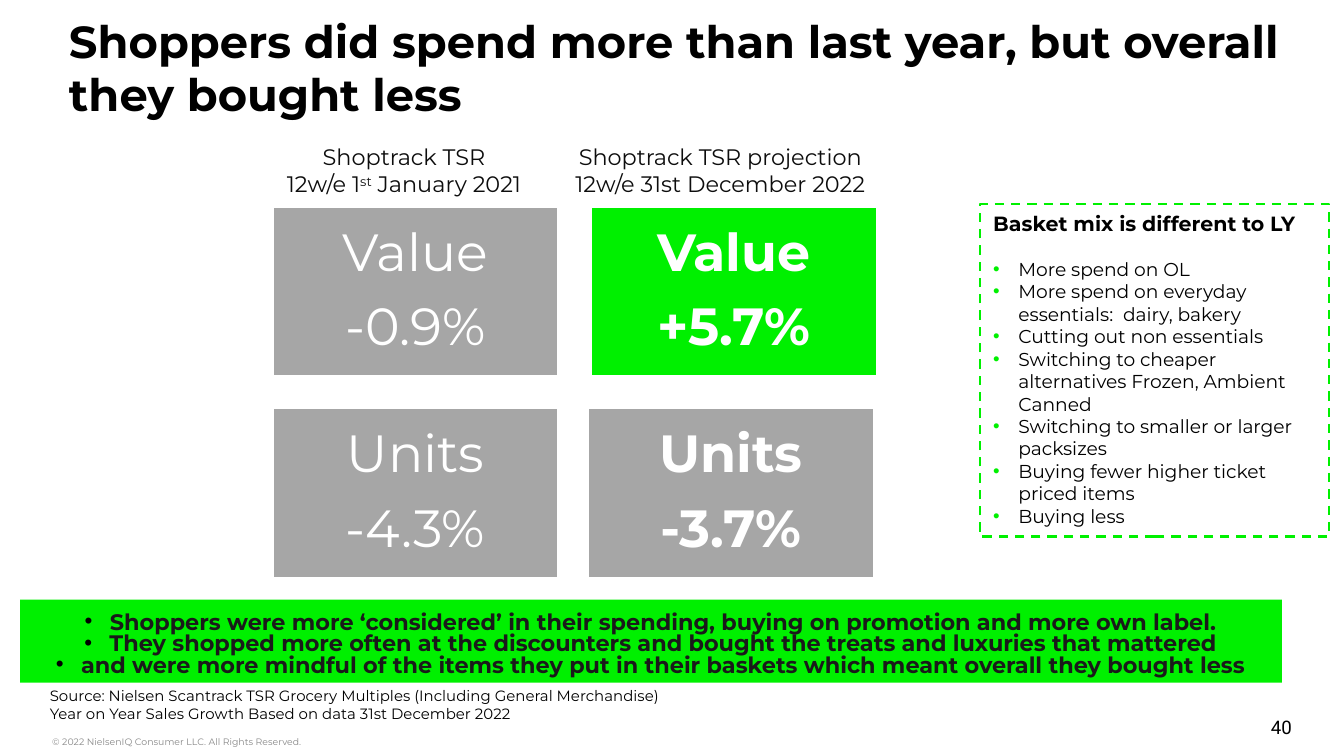
import dataclasses

import lxml.etree
import pptx
import pptx.dml.color
import pptx.enum.dml
import pptx.enum.shapes
import pptx.enum.text
import pptx.oxml.ns
import pptx.util

Pt = pptx.util.Pt
Align = pptx.enum.text.PP_ALIGN
Anchor = pptx.enum.text.MSO_ANCHOR


@dataclasses.dataclass(frozen=True)
class Theme:
    font: str = "Montserrat"
    digit: str = "Roboto"
    black: str = "000000"
    ink: str = "1A1A1A"
    label: str = "0D0D0D"
    white: str = "FFFFFF"
    gray: str = "A6A6A6"
    dim: str = "888888"
    green: str = "00F000"
    title: float = 24
    big: float = 28
    body: float = 12
    head: float = 11
    list: float = 10
    note: float = 8
    tiny: float = 5


T = Theme()


def color(code):
    return pptx.dml.color.RGBColor.from_string(code)


def style(para, size, code, bold=False, align=Align.LEFT, face=T.font):
    para.alignment = align
    font = para.font
    font.name, font.size, font.bold = face, Pt(size), bold
    font.color.rgb = color(code)


def bullet(para, code):
    """Give the paragraph a hanging dot in the given colour."""
    prop = para._p.get_or_add_pPr()
    prop.set("marL", str(Pt(13.5)))
    prop.set("indent", str(-Pt(13.5)))
    qn = pptx.oxml.ns.qn
    tint = lxml.etree.SubElement(prop, qn("a:buClr"))
    lxml.etree.SubElement(tint, qn("a:srgbClr"), val=code)
    lxml.etree.SubElement(prop, qn("a:buFont"), typeface="Arial")
    lxml.etree.SubElement(prop, qn("a:buChar"), char="•")


def setup(shape, pad, anchor):
    """Set wrap, anchor and (side, top) padding of the text frame."""
    frame = shape.text_frame
    frame.word_wrap = True
    frame.vertical_anchor = anchor
    frame.margin_left = frame.margin_right = Pt(pad[0])
    frame.margin_top = frame.margin_bottom = Pt(pad[1])
    return frame


def fill_in(frame, lines):
    """Write one paragraph per line and return the paragraphs."""
    for i, line in enumerate(lines):
        para = frame.add_paragraph() if i else frame.paragraphs[0]
        para.add_run().text = line
    return frame.paragraphs


def text(slide, box, lines, size, code, pad=(7.2, 3.6), anchor=Anchor.TOP, **look):
    shape = slide.shapes.add_textbox(*map(Pt, box))
    paras = fill_in(setup(shape, pad, anchor), lines)
    for para in paras:
        style(para, size, code, **look)
    return paras


def rect(slide, box, fill=None, line=None, width=1):
    kind = pptx.enum.shapes.MSO_SHAPE.RECTANGLE
    shape = slide.shapes.add_shape(kind, *map(Pt, box))
    shape.shadow.inherit = False
    if fill:
        shape.fill.solid()
        shape.fill.fore_color.rgb = color(fill)
    else:
        shape.fill.background()
    if line:
        shape.line.color.rgb = color(line)
        shape.line.width = Pt(width)
    else:
        shape.line.fill.background()
    return shape


def tile(slide, left, top, lines, fill, bold):
    shape = rect(slide, (left, top, 154, 92), fill, T.white, 2)
    for para in fill_in(setup(shape, (8.6, 8.6), Anchor.MIDDLE), lines):
        style(para, T.big, T.white, bold, Align.CENTER)
        para.line_spacing = 0.9
        para.space_after = Pt(9.8)


def band(slide, lines):
    shape = rect(slide, (10.8, 321.2, 676, 44.6), T.green)
    for para in fill_in(setup(shape, (7.2, 7.2), Anchor.TOP), lines):
        para.line_spacing = 0.8
        bullet(para, T.black)
        style(para, T.body, T.ink, True, Align.CENTER)


def basket(slide, head, items):
    shape = rect(slide, (525, 109.4, 187, 178), None, T.green, 1.25)
    shape.line.dash_style = pptx.enum.dml.MSO_LINE.DASH
    frame = setup(shape, (7.2, 3.6), Anchor.TOP)
    first, *rest = fill_in(frame, [head, *items])
    style(first, T.head, T.black, True)
    rest[0].space_before = Pt(12)
    for para in rest:
        bullet(para, T.green)
        style(para, T.list, T.black)


def main():
    deck = pptx.Presentation()
    deck.slide_width, deck.slide_height = Pt(720), Pt(405)
    slide = deck.slides.add_slide(deck.slide_layouts[6])

    text(slide, (37, 0, 664, 31),
         ["Shoppers did spend more than last year, but overall they bought less"],
         T.title, T.black, pad=(0, 7.2), bold=True)

    last = text(slide, (119.5, 73.4, 194, 36), ["Shoptrack TSR", "12w/e 1"],
                T.body, T.label, align=Align.CENTER)[1]
    raised = last.add_run()
    raised.text = "st"
    raised.font._element.set("baseline", "30000")
    last.add_run().text = " January 2021"
    text(slide, (288, 73.4, 196, 36),
         ["Shoptrack TSR projection", "12w/e 31st December 2022"],
         T.body, T.label, align=Align.CENTER)

    for left, top, name, value, fill, bold in (
        (145.6, 110.2, "Value", "-0.9%", T.gray, False),
        (316.2, 110.2, "Value", "+5.7%", T.green, True),
        (145.6, 218.2, "Units", "-4.3%", T.gray, False),
        (314.6, 218.2, "Units", "-3.7%", T.gray, True),
    ):
        tile(slide, left, top, [name, value], fill, bold)

    basket(slide, "Basket mix is different to LY", [
        "More spend on OL",
        "More spend on everyday essentials:  dairy, bakery",
        "Cutting out non essentials",
        "Switching to cheaper alternatives Frozen, Ambient Canned",
        "Switching to smaller or larger packsizes",
        "Buying fewer higher ticket priced items",
        "Buying less",
    ])
    band(slide, [
        "Shoppers were more ‘considered’ in their spending, buying on promotion and more own label.",
        "They shopped more often at the discounters and bought the treats and luxuries that mattered",
        "and were more mindful of the items they put in their baskets which meant overall they bought less",
    ])

    text(slide, (19.6, 364.3, 575, 27), [
        "Source: Nielsen Scantrack TSR Grocery Multiples (Including General Merchandise)",
        "Year on Year Sales Growth Based on data 31st December 2022",
    ], T.note, T.black)
    text(slide, (28, 391, 399, 14),
         ["© 2022 NielsenIQ Consumer LLC. All Rights Reserved."],
         T.tiny, T.dim, pad=(0, 3.6))
    text(slide, (530, 378.8, 162, 21.6), ["40"], T.list, T.black,
         pad=(0, 3.6), anchor=Anchor.MIDDLE, align=Align.RIGHT, face=T.digit)

    deck.save("out.pptx")


if __name__ == "__main__":
    main()
